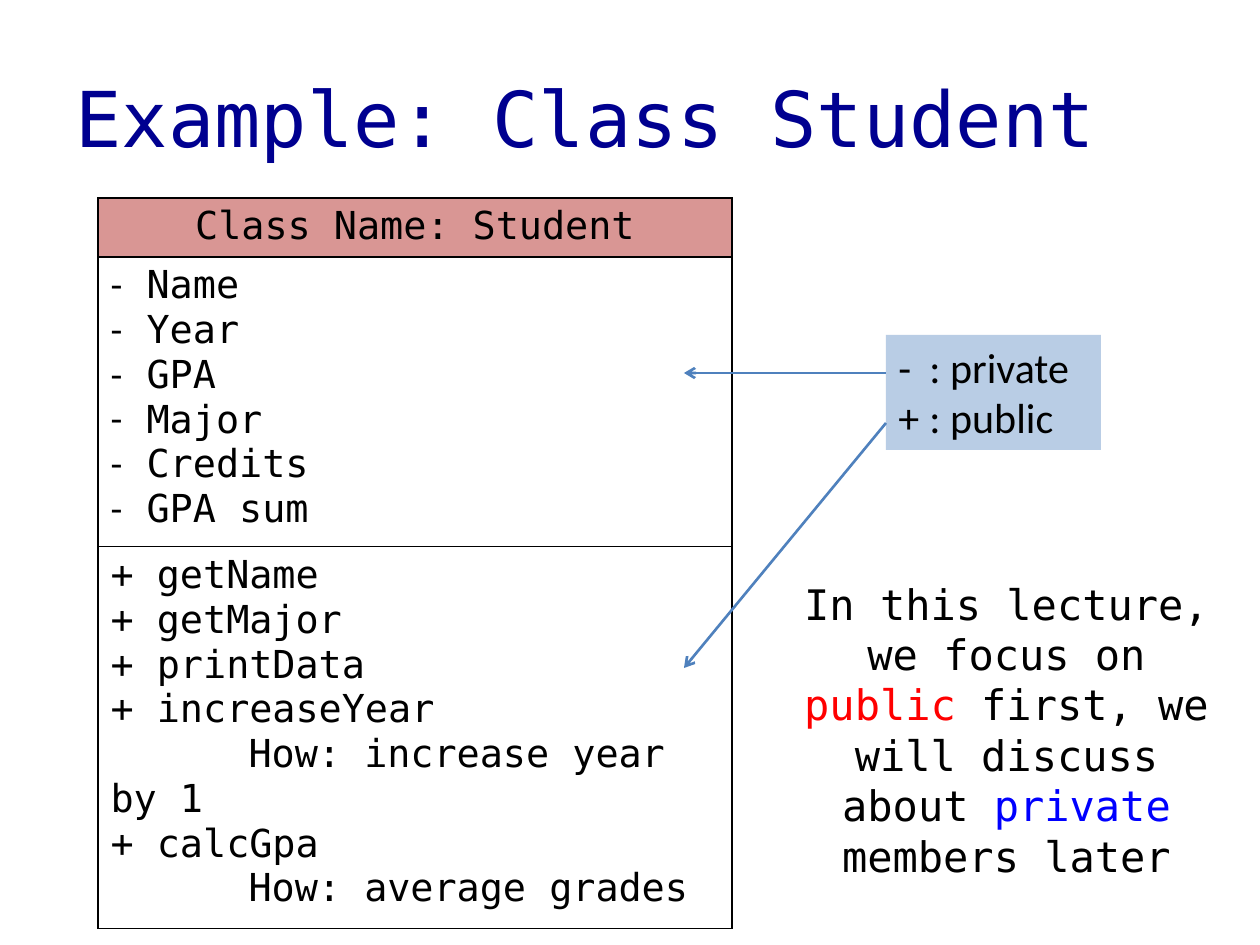
"""Build a slide that shows the Student class with private and public members."""
from lxml.etree import SubElement
from pptx import Presentation
from pptx.dml.color import RGBColor
from pptx.enum.shapes import MSO_CONNECTOR as Connector, MSO_SHAPE as Shape
from pptx.enum.text import MSO_ANCHOR as Anchor, PP_ALIGN as Align
from pptx.oxml.ns import qn
from pptx.util import Emu, Pt

COLORS = {
    "title": "000090", "text": "000000", "header": "D99694", "body": "FFFFFF",
    "legend": "B9CDE5", "arrow": "4F81BD", "public": "FF0000", "private": "0000FF",
}
MONO, SANS = "DejaVu Sans Mono", "Calibri"
FIELDS = ["Name", "Year", "GPA", "Major", "Credits", "GPA sum"]
METHODS = ["+ getName", "+ getMajor", "+ printData", "+ increaseYear",
           "How: increase year by 1", "+ calcGpa", "How: average grades"]
ROW_HEIGHTS = [57, 283, 371]


def px(length):
    return Emu(round(length * 914400 / 126))


def color(name):
    return RGBColor.from_string(COLORS[name])


def write(frame, lines, size=22, font=MONO, align=Align.LEFT, hang=0, bullet=None, ink="text"):
    frame.word_wrap = True
    for index, line in enumerate(lines):
        para = frame.paragraphs[0] if index == 0 else frame.add_paragraph()
        para.alignment = align
        props = para._p.get_or_add_pPr()
        first = 138 if str(line).startswith("How:") else -hang
        props.set("marL", str(px(hang)))
        props.set("indent", str(px(first)))
        if bullet:
            SubElement(props, qn("a:buFont"), typeface=SANS)
            SubElement(props, qn("a:buChar"), char=bullet)
        for text, name in [(line, ink)] if isinstance(line, str) else line:
            span = para.add_run()
            span.text = text
            span.font.size = Pt(size)
            span.font.name = font
            span.font.color.rgb = color(name)


def add_text(page, place, lines, anchor=Anchor.TOP, **style):
    box = page.shapes.add_textbox(*map(px, place))
    box.text_frame.vertical_anchor = anchor
    write(box.text_frame, lines, **style)


def add_legend(page, place, lines):
    box = page.shapes.add_shape(Shape.RECTANGLE, *map(px, place))
    box.shadow.inherit = False
    box.fill.solid()
    box.fill.fore_color.rgb = color("legend")
    box.line.fill.background()
    box.text_frame.vertical_anchor = Anchor.TOP
    write(box.text_frame, lines, size=24, font=SANS, hang=31)


def style_cell(cell, fill):
    props = cell._tc.get_or_add_tcPr()
    for side in ("lnL", "lnR", "lnT", "lnB"):
        border = SubElement(props, qn(f"a:{side}"), w=str(Pt(1)))
        SubElement(SubElement(border, qn("a:solidFill")), qn("a:srgbClr"), val=COLORS["text"])
    cell.fill.solid()
    cell.fill.fore_color.rgb = color(fill)


def add_class_table(page):
    place = (98, 198, 634, sum(ROW_HEIGHTS))
    table = page.shapes.add_table(len(ROW_HEIGHTS), 1, *map(px, place)).table
    contents = [
        (["Class Name: Student"], "header", {"align": Align.CENTER}),
        (FIELDS, "body", {"hang": 36, "bullet": "-"}),
        (METHODS, "body", {}),
    ]
    for row, height, (lines, fill, style) in zip(table.rows, ROW_HEIGHTS, contents):
        row.height = px(height)
        style_cell(row.cells[0], fill)
        write(row.cells[0].text_frame, lines, **style)


def add_arrow(page, start, end):
    arrow = page.shapes.add_connector(Connector.STRAIGHT, *map(px, start + end))
    arrow.line.color.rgb = color("arrow")
    arrow.line.width = Pt(1.5)
    SubElement(arrow.line._get_or_add_ln(), qn("a:tailEnd"), type="arrow")
    SubElement(arrow._element.spPr, qn("a:effectLst"))


def main():
    deck = Presentation()
    deck.slide_width, deck.slide_height = px(1260), px(945)
    page = deck.slides.add_slide(deck.slide_layouts[6])
    add_text(page, (63, 38, 1134, 157), ["Example: Class Student"],
             anchor=Anchor.MIDDLE, size=44, ink="title")
    add_class_table(page)
    add_legend(page, (886, 335, 215, 115), ["-\t: private", "+\t: public"])
    note = [("In this lecture, we focus on ", "text"), ("public", "public"),
            (" first, we will discuss about ", "text"), ("private", "private"),
            (" members later", "text")]
    add_text(page, (771, 572, 471, 217), [note], size=24, align=Align.CENTER)
    for start_y, end_y in [(373, 373), (423, 668)]:
        add_arrow(page, (886, start_y), (684, end_y))
    deck.save("out.pptx")


if __name__ == "__main__":
    main()
